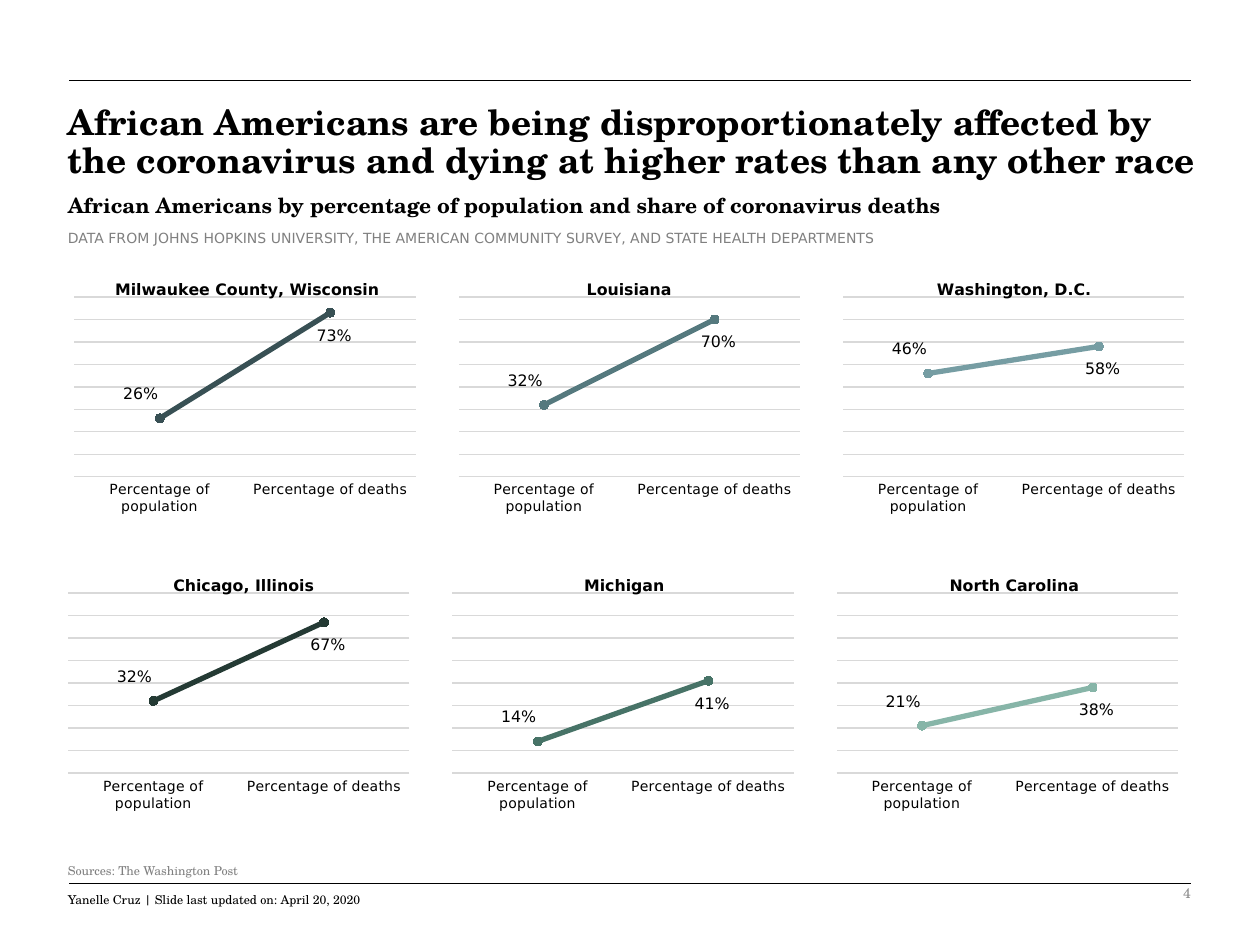
from lxml import etree
from pptx import Presentation
from pptx.chart.data import CategoryChartData
from pptx.dml.color import RGBColor
from pptx.enum import chart as ch, text
from pptx.oxml.ns import qn
from pptx.util import Inches, Pt

SERIF, SANS = "TeX Gyre Schola", "DejaVu Sans"
GREY = "808080"
CATS = ["Percentage of population", "Percentage of deaths"]
# Each place: name, left edge of its title as a share of the chart, values, color
ROWS = [
    (0.44, 2.15, [
        ("Milwaukee County, Wisconsin", 0.15, (0.26, 0.73), "385054"),
        ("Louisiana", 0.38, (0.32, 0.70), "55797E"),
        ("Washington, D.C.", 0.29, (0.46, 0.58), "769DA3"),
    ]),
    (0.39, 4.5, [
        ("Chicago, Illinois", 0.32, (0.32, 0.67), "243A34"),
        ("Michigan", 0.39, (0.14, 0.41), "477367"),
        ("North Carolina", 0.34, (0.21, 0.38), "87B5A8"),
    ]),
]
STEP = 3.05
# Label shifts, as shares of the chart size
SHIFTS = [(-0.05, -0.02), (0.01, 0.16)]
C15 = "http://schemas.microsoft.com/office/drawing/2012/chart"


def rgb(code):
    return RGBColor.from_string(code)


def style(font, size, name=SANS, color="000000", bold=False):
    font.size, font.name, font.bold = Pt(size), name, bold
    font.color.rgb = rgb(color)


def stroke(line, color, width):
    line.color.rgb = rgb(color)
    line.width = Pt(width)


def write(slide, box, words, size, name=SERIF, color="000000", bold=False,
          space=1.0, align=text.PP_ALIGN.LEFT, anchor=text.MSO_ANCHOR.TOP):
    frame = slide.shapes.add_textbox(*map(Inches, box)).text_frame
    frame.word_wrap = True
    frame.vertical_anchor = anchor
    para = frame.paragraphs[0]
    para.alignment, para.line_spacing = align, space
    run = para.add_run()
    run.text = words
    style(run.font, size, name, color, bold)
    return frame


def rule(slide, left, right, y):
    line = slide.shapes.add_connector(
        1, Inches(left), Inches(y), Inches(right), Inches(y))
    stroke(line.line, "000000", 0.5)
    etree.SubElement(line._element.spPr, qn("a:effectLst"))


def layout(**parts):
    node = etree.Element(qn("c:layout"))
    manual = etree.SubElement(node, qn("c:manualLayout"))
    for tag, val in parts.items():
        etree.SubElement(manual, qn("c:" + tag)).set("val", str(val))
    return node


def place_at(parent, index, **parts):
    for old in parent.findall(qn("c:layout")):
        parent.remove(old)
    parent.insert(index, layout(xMode="edge", yMode="edge", **parts)
                  if "w" not in parts else
                  layout(layoutTarget="inner", xMode="edge", yMode="edge", **parts))


def hide_leaders(node):
    for old in node.findall(qn("c:showLeaderLines")):
        old.set("val", "0")
    more = etree.SubElement(node, qn("c:extLst"))
    ext = etree.SubElement(more, qn("c:ext"), nsmap={"c15": C15})
    ext.set("uri", "{CE6537A1-D6FC-4f65-9D91-7224C49458BB}")
    etree.SubElement(ext, f"{{{C15}}}showLeaderLines").set("val", "0")


def header(slide, left, width):
    rule(slide, 0.55, 9.45, 0.64)
    write(slide, (left, 0.79, width, 0.7),
          "African Americans are being disproportionately affected by "
          "the coronavirus and dying at higher rates than any other race",
          20, bold=True, space=0.9)
    write(slide, (left, 1.48, width, 0.33),
          "African Americans by percentage of population and share of "
          "coronavirus deaths", 12, bold=True)
    write(slide, (left, 1.77, 7.6, 0.24),
          "DATA FROM JOHNS HOPKINS UNIVERSITY, THE AMERICAN COMMUNITY SURVEY, "
          "AND STATE HEALTH DEPARTMENTS", 8, SANS, GREY)


def trend(slide, box, place, edge, vals, color):
    data = CategoryChartData(number_format="0%")
    data.categories = CATS
    data.add_series(place, vals)
    chart = slide.shapes.add_chart(
        ch.XL_CHART_TYPE.LINE_MARKERS, *map(Inches, box), data).chart
    style(chart.font, 10, SERIF)
    chart.has_legend = False

    # Title, above the plot area
    chart.has_title = True
    title = chart.chart_title
    run = title.text_frame.paragraphs[0].add_run()
    run.text = place
    style(run.font, 9, bold=True)
    place_at(title._element, 1, x=edge, y=0.02)
    place_at(chart._chartSpace.chart.plotArea, 0, x=0.05, y=0.1, w=0.9, h=0.69)

    # Axes
    cat, val = chart.category_axis, chart.value_axis
    cat.major_tick_mark = cat.minor_tick_mark = ch.XL_TICK_MARK.NONE
    style(cat.tick_labels.font, 8)
    stroke(cat.format.line, "D9D9D9", 0.75)
    val.minimum_scale, val.maximum_scale, val.major_unit = 0, 0.8, 0.1
    val.has_major_gridlines = True
    stroke(val.major_gridlines.format.line, "D9D9D9", 0.75)
    val.tick_labels.number_format = "0%"
    val.visible = False

    # Line and markers
    chart.plots[0].vary_by_categories = False
    line = chart.plots[0].series[0]
    line.smooth = False
    stroke(line.format.line, color, 3)
    mark = line.marker
    mark.style, mark.size = ch.XL_MARKER_STYLE.CIRCLE, 5
    mark.format.fill.solid()
    mark.format.fill.fore_color.rgb = rgb(color)
    stroke(mark.format.line, color, 0.75)

    # Value labels
    tags = line.data_labels
    tags.show_value = True
    tags.number_format, tags.number_format_is_linked = "0%", False
    for tag in (tags, *(line.points[i].data_label for i in range(len(vals)))):
        style(tag.font, 9)
        tag.position = ch.XL_LABEL_POSITION.ABOVE
    for node, (x, y) in zip(tags._element.findall(qn("c:dLbl")), SHIFTS):
        node.insert(1, layout(x=x, y=y))
    hide_leaders(tags._element)


def footer(slide, left):
    write(slide, (left, 6.67, 4.75, 0.33), "Sources: The Washington Post", 7,
          color=GREY, space=1.1,
          anchor=text.MSO_ANCHOR.BOTTOM).margin_bottom = Inches(0.03)
    rule(slide, 0.55, 9.45, 7.01)
    write(slide, (left, 7.02, 3.33, 0.23),
          "Yanelle Cruz | Slide last updated on: April 20, 2020", 7, space=1.1)
    write(slide, (7.06, 6.89, 2.49, 0.4), "4", 8, color="8C8C8C",
          align=text.PP_ALIGN.RIGHT, anchor=text.MSO_ANCHOR.MIDDLE)


def main():
    deck = Presentation()
    deck.slide_width, deck.slide_height = Inches(10), Inches(7.5)
    slide = deck.slides.add_slide(deck.slide_layouts[6])
    header(slide, 0.44, 9.2)
    for left, top, places in ROWS:
        for i, place in enumerate(places):
            trend(slide, (left + i * STEP, top, 3.01, 2.07), *place)
    footer(slide, 0.44)
    deck.save("out.pptx")


if __name__ == "__main__":
    main()
